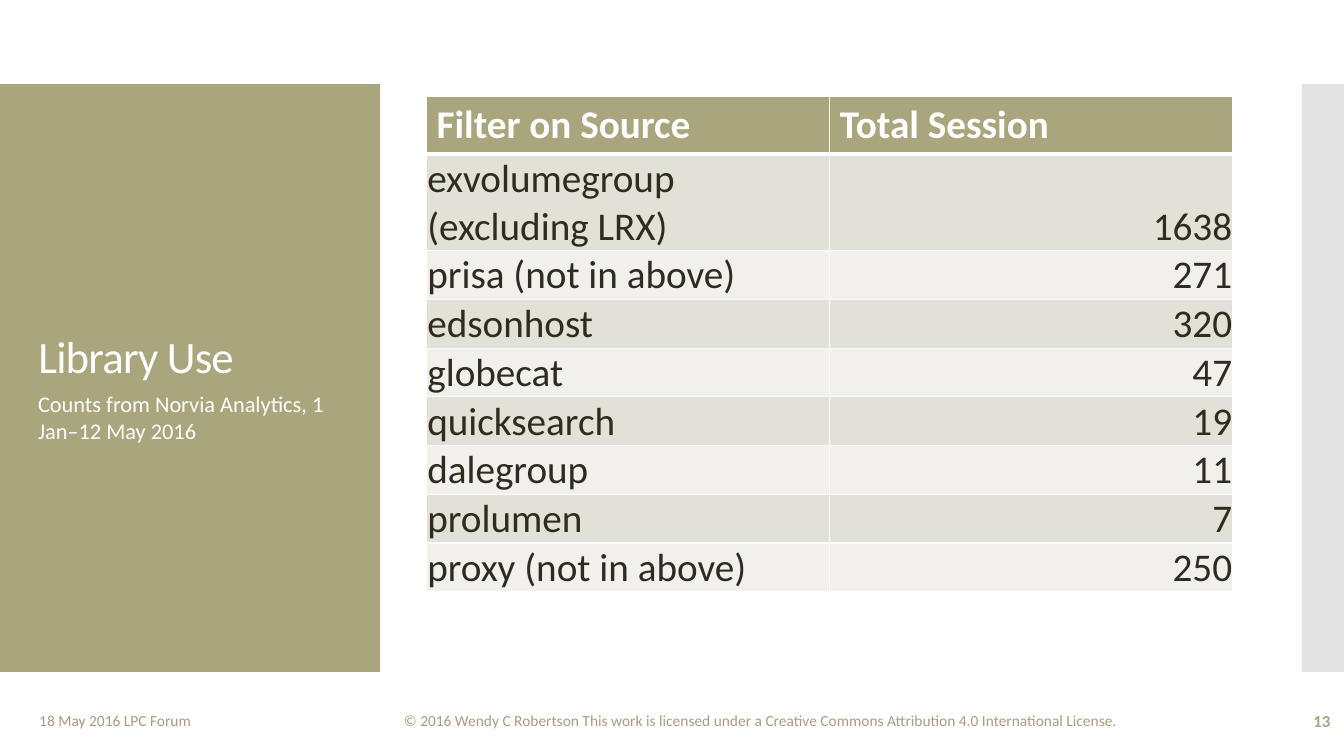
"""Builds the Library Use slide with a table of sessions by source."""
from lxml import etree
from pptx import Presentation
from pptx.dml.color import RGBColor
from pptx.enum.shapes import MSO_SHAPE
from pptx.enum.text import MSO_ANCHOR, PP_ALIGN
from pptx.oxml.ns import qn
from pptx.util import Cm, Pt

RECTANGLE = MSO_SHAPE.RECTANGLE
TOP, MIDDLE, BOTTOM = MSO_ANCHOR.TOP, MSO_ANCHOR.MIDDLE, MSO_ANCHOR.BOTTOM
LEFT, RIGHT = PP_ALIGN.LEFT, PP_ALIGN.RIGHT
FONT = "Calibri"
COLORS = {
    "olive": "A9A57C",
    "gray": "C8C8C8",
    "white": "FFFFFF",
    "ink": "2F2B20",
    "footer": "A89D7F",
    "dark_band": "E2E1D7",
    "light_band": "F1F0EC",
}
SESSIONS = [
    ("Filter on Source", "Total Session"),
    ("exvolumegroup (excluding LRX)", "1638"),
    ("prisa (not in above)", "271"),
    ("edsonhost", "320"),
    ("globecat", "47"),
    ("quicksearch", "19"),
    ("dalegroup", "11"),
    ("prolumen", "7"),
    ("proxy (not in above)", "250"),
]


def write(frame, text, size, color, align=LEFT, bold=False):
    para = frame.paragraphs[0]
    para.alignment = align
    span = para.add_run()
    span.text = text
    span.font.name = FONT
    span.font.size = Pt(size)
    span.font.bold = bold
    span.font.color.rgb = RGBColor.from_string(COLORS[color])
    return para


def set_border(cell, side, points):
    line = etree.Element(qn(f"a:{side}"), w=str(Pt(points)))
    fill = etree.SubElement(line, qn("a:solidFill"))
    etree.SubElement(fill, qn("a:srgbClr"), val=COLORS["white"])
    return line


deck = Presentation()
deck.slide_width, deck.slide_height = Cm(33.87), Cm(19.05)
page = deck.slides.add_slide(deck.slide_layouts[5])
title = page.shapes.title

for left, width, color, opacity in [(0, 9.58, "olive", 100), (32.81, 1.06, "gray", 50)]:
    panel = page.shapes.add_shape(RECTANGLE, Cm(left), Cm(2.12), Cm(width), Cm(14.81))
    panel.shadow.inherit = False
    panel.line.fill.background()
    panel.fill.solid()
    panel.fill.fore_color.rgb = RGBColor.from_string(COLORS[color])
    if opacity < 100:
        shade = panel.fill._xPr.find(f".//{qn('a:srgbClr')}")
        etree.SubElement(shade, qn("a:alpha"), val=str(opacity * 1000))
    title._element.addprevious(panel._element)

title.left, title.top, title.width, title.height = Cm(0.71), Cm(3.18), Cm(7.87), Cm(6.6)
title.text_frame.word_wrap = True
title.text_frame.vertical_anchor = BOTTOM
heading = write(title.text_frame, "Library Use", 32, "white")
heading.line_spacing = 0.9
heading.runs[0].font._element.set("spc", "-60")

table = page.shapes.add_table(
    len(SESSIONS), 2, Cm(10.75), Cm(2.42), Cm(20.32), Cm(1.04 * len(SESSIONS))
).table
for row, record in enumerate(SESSIONS):
    header = row == 0
    band = "olive" if header else "dark_band" if row % 2 else "light_band"
    for column, text in enumerate(record):
        cell = table.cell(row, column)
        cell.fill.solid()
        cell.fill.fore_color.rgb = RGBColor.from_string(COLORS[band])
        if not header:
            cell.vertical_anchor = BOTTOM
            cell.margin_left = cell.margin_right = cell.margin_top = Cm(0.02)
            cell.margin_bottom = 0
        align = RIGHT if column and not header else LEFT
        write(cell.text_frame, text, 28, "white" if header else "ink", align, header)
        widths = {"lnL": 1, "lnR": 1, "lnT": 3 if row == 1 else 1, "lnB": 3 if header else 1}
        for position, (side, points) in enumerate(widths.items()):
            cell._tc.get_or_add_tcPr().insert(position, set_border(cell, side, points))

license_text = (
    "© 2016 Wendy C Robertson This work is licensed under a "
    "Creative Commons Attribution 4.0 International License."
)
captions = [
    ("Counts from Norvia Analytics, 1 Jan–12 May 2016",
     0.71, 9.7, 7.87, 6.45, 16, "white", TOP, LEFT, False, 12),
    ("18 May 2016 LPC Forum", 0.74, 17.65, 7.62, 1.02, 11, "footer", MIDDLE, LEFT, False, 0),
    ("13", 29.54, 17.65, 4.24, 1.02, 12, "olive", MIDDLE, RIGHT, True, 0),
    (license_text, 9.93, 17.65, 18.8, 1.02, 11, "footer", MIDDLE, LEFT, False, 0),
]
for text, left, top, width, height, size, color, anchor, align, bold, before in captions:
    box = page.shapes.add_textbox(Cm(left), Cm(top), Cm(width), Cm(height))
    box.text_frame.word_wrap = True
    box.text_frame.vertical_anchor = anchor
    write(box.text_frame, text, size, color, align, bold).space_before = Pt(before)

deck.save("out.pptx")
